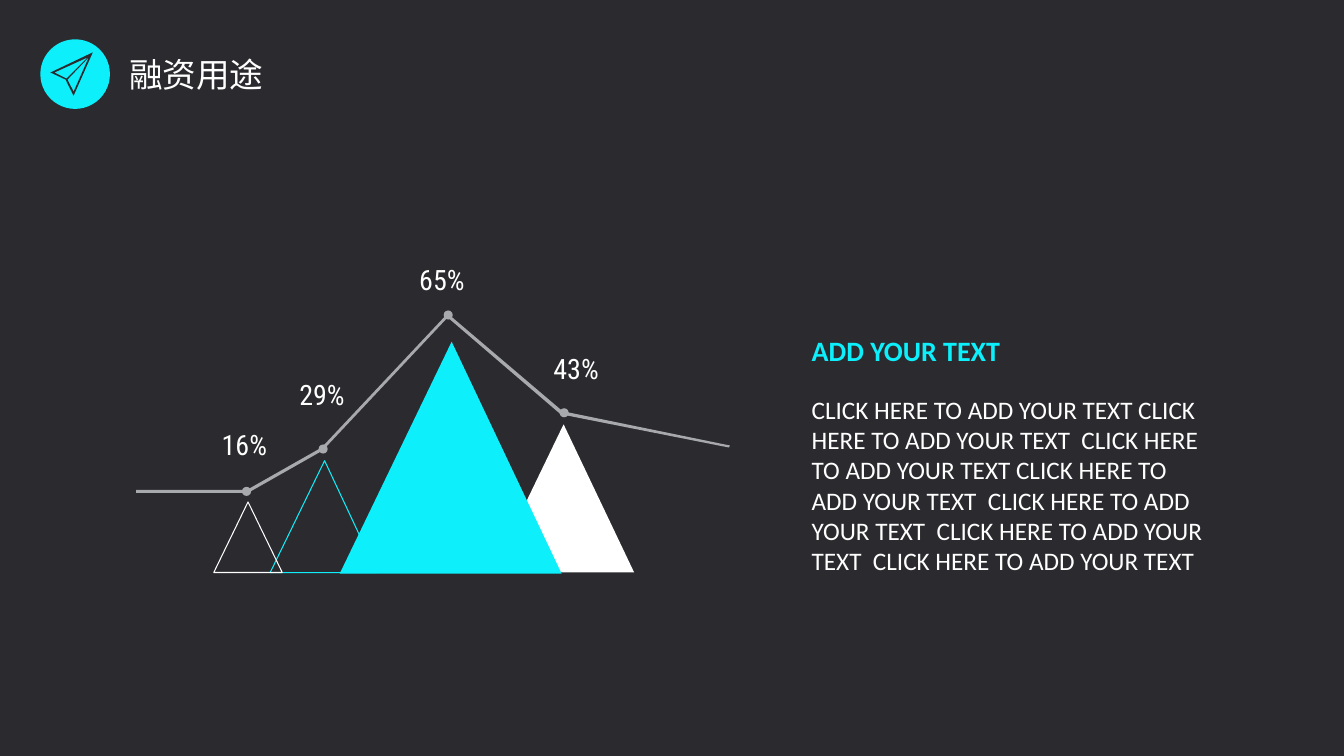
"""Build the funding-use slide with its mountain graph."""
from pptx import Presentation
from pptx.dml.color import RGBColor
from pptx.enum.shapes import MSO_SHAPE as Kind
from pptx.enum.text import MSO_ANCHOR as Anchor, MSO_AUTO_SIZE as Auto, PP_ALIGN as Align
from pptx.oxml.ns import qn
from pptx.util import Inches, Pt
from lxml.etree import SubElement

CYAN, WHITE, GREY, DARK = "0DEFFA", "FFFFFF", "A7A9AC", "2B2A2F"
hue = RGBColor.from_string


def paint(shape, fill=None, line=None):
    """Set fill and outline, or clear them."""
    shape.shadow.inherit = False
    if fill:
        shape.fill.solid()
        shape.fill.fore_color.rgb = hue(fill)
    else:
        shape.fill.background()
    if line:
        shape.line.color.rgb = hue(line)
        shape.line.width = Pt(0.75)
    else:
        shape.line.fill.background()


def trace(rings, **look):
    """Draw closed outlines as one shape."""
    first, *rest = [[(Inches(x), Inches(y)) for x, y in ring] for ring in rings]
    pen = slide.shapes.build_freeform(*first[0])
    pen.add_line_segments(first[1:], close=True)
    for ring in rest:
        pen.move_to(*ring[0])
        pen.add_line_segments(ring[1:], close=True)
    paint(pen.convert_to_shape(), **look)


deck = Presentation()
deck.slide_width, deck.slide_height = Inches(13.33), Inches(7.5)
slide = deck.slides.add_slide(deck.slide_layouts[4])
slide.background.fill.solid()
slide.background.fill.fore_color.rgb = hue(DARK)
holders = {item.placeholder_format.idx: item for item in slide.placeholders}
for spare in (2, 4):
    item = holders[spare].element
    item.getparent().remove(item)

peaks = [
    (4.88, 6.29, 5.59, 4.21, 5.68, {"fill": WHITE}),
    (2.68, 3.74, 3.22, 4.57, 5.68, {"line": CYAN}),
    (2.12, 2.8, 2.46, 4.98, 5.68, {"line": WHITE}),
    (3.37, 5.57, 4.48, 3.39, 5.69, {"fill": CYAN}),
]
for left, right, mid, top, base, look in peaks:
    trace([[(right, base), (mid, top), (left, base)]], **look)

upper = [(1.35, 4.86), (2.45, 4.86), (3.19, 4.44), (4.44, 3.11), (5.58, 4.08), (7.24, 4.42)]
lower = [(7.23, 4.44), (5.56, 4.11), (4.44, 3.15), (3.2, 4.47), (2.46, 4.89), (1.35, 4.89)]
trace([upper + lower], fill=GREY)

dots = [(4.4, 3.08, 0.09, GREY), (3.16, 4.41, 0.09, GREY), (5.55, 4.05, 0.09, GREY),
        (2.4, 4.83, 0.09, GREY), (0.4, 0.39, 0.69, CYAN)]
for left, top, size, fill in dots:
    dot = slide.shapes.add_shape(Kind.OVAL, *map(Inches, (left, top, size, size)))
    paint(dot, fill=fill)

plane = [
    [(0.65, 0.79), (0.73, 0.95), (0.92, 0.52), (0.5, 0.72)],
    [(0.66, 0.78), (0.54, 0.72), (0.87, 0.57)],
    [(0.73, 0.91), (0.67, 0.79), (0.88, 0.57)],
]
trace(plane, fill=DARK)

words = (
    "CLICK HERE TO ADD YOUR TEXT CLICK HERE TO ADD YOUR TEXT  "
    "CLICK HERE TO ADD YOUR TEXT CLICK HERE TO ADD YOUR TEXT  "
    "CLICK HERE TO ADD YOUR TEXT  CLICK HERE TO ADD YOUR TEXT  "
    "CLICK HERE TO ADD YOUR TEXT"
)
label = {"name": "Roboto Condensed", "size": Pt(20), "bold": False}
head = {"name": "Calibri", "size": Pt(20), "bold": True}
prose = {"name": "Calibri", "size": Pt(18), "bold": False}
title = {"name": "Noto Sans CJK SC", "size": Pt(24), "bold": False}
texts = [
    (None, "16%", (2.1, 4.19, 0.67, 0.44), label, WHITE),
    (None, "29%", (2.87, 3.7, 0.87, 0.44), label, WHITE),
    (None, "65%", (4.06, 2.56, 0.87, 0.44), label, WHITE),
    (None, "43%", (5.39, 3.44, 0.87, 0.44), label, WHITE),
    (1, "ADD YOUR TEXT", (7.95, 3.26, 2.2, 0.44), head, CYAN),
    (3, words, (7.95, 3.86, 4.09, 1.92), prose, WHITE),
    (0, "融资用途", (1.18, 0.48, 1.94, 0.5), title, WHITE),
]
for slot, text, place, style, tint in texts:
    area = [Inches(part) for part in place]
    if slot is None:
        box = slide.shapes.add_textbox(*area)
    else:
        box = holders[slot]
        box.left, box.top, box.width, box.height = area
    frame = box.text_frame
    frame.word_wrap = True
    frame.auto_size = Auto.NONE
    frame.vertical_anchor = Anchor.TOP
    para = frame.paragraphs[0]
    para.alignment = Align.LEFT
    para.space_before = Pt(0)
    run = para.add_run()
    run.text = text
    for key, value in style.items():
        setattr(run.font, key, value)
    run.font.color.rgb = hue(tint)
    if style is title:
        SubElement(run.font._element, qn("a:ea"), typeface=style["name"])

deck.save("out.pptx")
